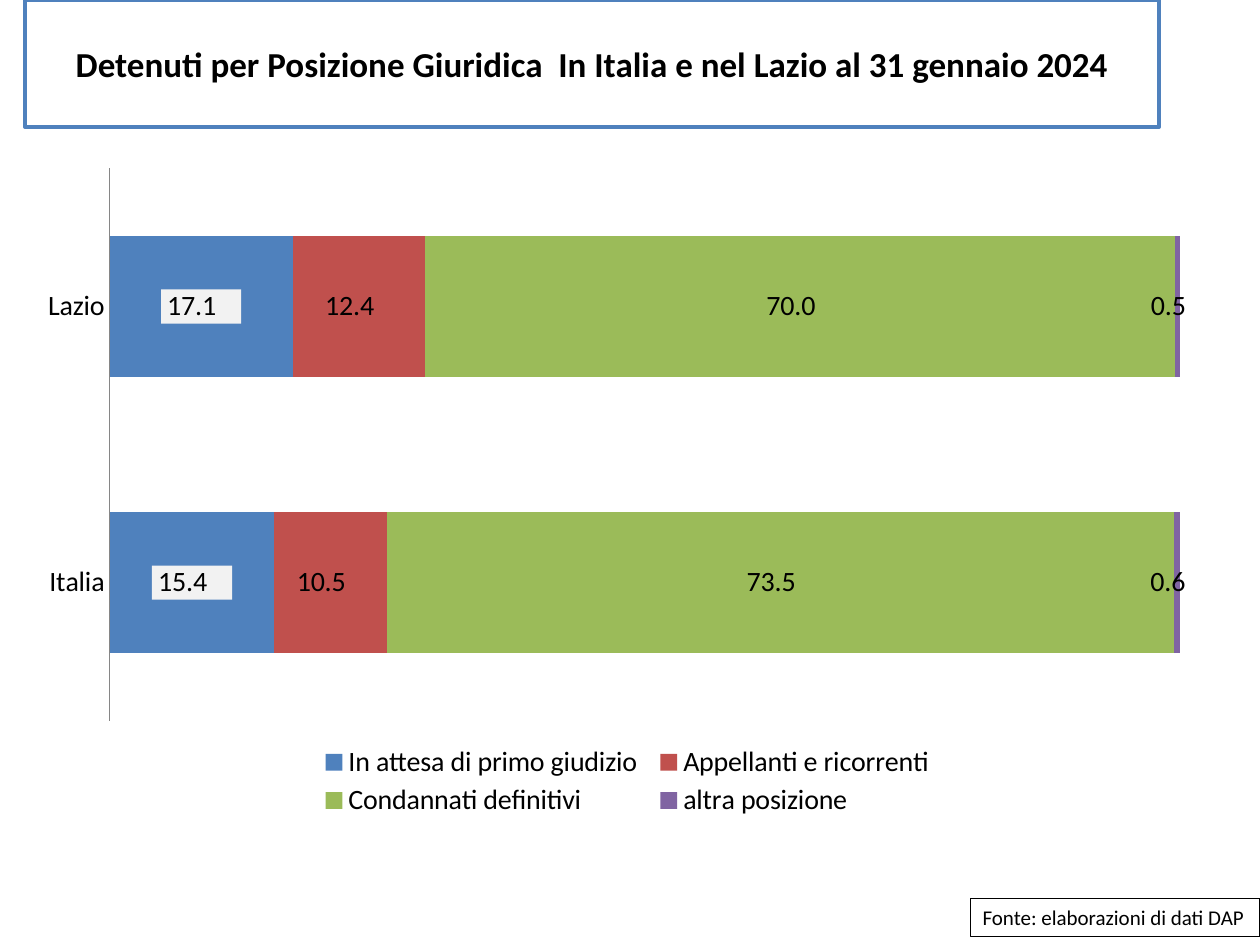
from dataclasses import dataclass

import pptx
import pptx.chart.data
import pptx.dml.color
import pptx.enum.chart
import pptx.enum.text
import pptx.oxml
import pptx.oxml.ns
import pptx.util
from lxml import etree

Pt = pptx.util.Pt
FONT = "Calibri"
NUMBER_FORMAT = r"_-* #,##0.0\ _€_-;\-* #,##0.0\ _€_-;_-* "
NS = pptx.oxml.ns.nsdecls("c", "a")


@dataclass
class Position:
    name: str
    values: tuple[float, float]
    color: str
    label_fill: str | None = None


POSITIONS = [
    Position("In attesa di primo giudizio", (17.1, 15.4), "4F81BD", "F2F2F2"),
    Position("Appellanti e ricorrenti", (12.4, 10.5), "C0504D"),
    Position("Condannati definitivi", (70, 73.5), "9BBB59"),
    Position("altra posizione", (0.5, 0.6), "8064A2"),
]


def rgb(color: str) -> pptx.dml.color.RGBColor:
    return pptx.dml.color.RGBColor.from_string(color)


def format_font(font, size: float, bold: bool = False) -> None:
    font.name = FONT
    font.size = Pt(size)
    font.bold = bold
    font.color.rgb = rgb("000000")


def write(sp, text: str, *, size: float, bold: bool = False, align=None,
          anchor=pptx.enum.text.MSO_ANCHOR.TOP, wrap: bool = True) -> None:
    tf = sp.text_frame
    tf.word_wrap = wrap
    tf.vertical_anchor = anchor
    p = tf.paragraphs[0]
    p.alignment = align
    r = p.add_run()
    r.text = text
    format_font(r.font, size, bold)


def frame(sp, line: str, width: float) -> None:
    sp.fill.solid()
    sp.fill.fore_color.rgb = rgb("FFFFFF")
    sp.line.color.rgb = rgb(line)
    sp.line.width = Pt(width)


def manual_layout(x: float, y: float, w: float, h: float, inner: bool = False):
    target = '<c:layoutTarget val="inner"/>' if inner else ""
    return pptx.oxml.parse_xml(
        f'<c:layout {NS}><c:manualLayout>{target}'
        '<c:xMode val="edge"/><c:yMode val="edge"/>'
        f'<c:x val="{x}"/><c:y val="{y}"/><c:w val="{w}"/><c:h val="{h}"/>'
        '</c:manualLayout></c:layout>')


def format_series(series, position: Position) -> None:
    series.format.fill.solid()
    series.format.fill.fore_color.rgb = rgb(position.color)
    labels = series.data_labels
    labels.show_value = True
    labels.number_format = NUMBER_FORMAT
    labels.number_format_is_linked = False
    format_font(labels.font, 16)
    if position.label_fill:
        fill = pptx.oxml.parse_xml(
            f'<c:spPr {NS}><a:solidFill><a:srgbClr val="{position.label_fill}"/>'
            '</a:solidFill></c:spPr>')
        labels._element.find(pptx.oxml.ns.qn("c:numFmt")).addnext(fill)


def add_positions_chart(s) -> None:
    data = pptx.chart.data.CategoryChartData(number_format=NUMBER_FORMAT)
    data.categories = ["Lazio", "Italia"]
    for position in POSITIONS:
        data.add_series(position.name, position.values)
    chart = s.shapes.add_chart(
        pptx.enum.chart.XL_CHART_TYPE.BAR_STACKED_100,
        Pt(15), Pt(88.5), Pt(680), Pt(385), data).chart
    format_font(chart.font, 16)
    chart.has_title = False

    plot = chart.plots[0]
    plot.gap_width = 95
    plot.overlap = 100
    plot.vary_by_categories = False
    for series, position in zip(plot.series, POSITIONS):
        format_series(series, position)

    axis = chart.category_axis
    axis.reverse_order = True
    axis.major_tick_mark = pptx.enum.chart.XL_TICK_MARK.NONE
    axis.format.line.color.rgb = rgb("868686")
    axis.format.line.width = Pt(0.75)
    chart.value_axis.visible = False
    chart.value_axis.has_major_gridlines = False

    chart.has_legend = True
    legend = chart.legend
    legend.position = pptx.enum.chart.XL_LEGEND_POSITION.BOTTOM
    legend.include_in_layout = False
    format_font(legend.font, 16)

    qn = pptx.oxml.ns.qn
    for old in legend._element.findall(qn("c:layout")):
        legend._element.remove(old)
    legend._element.find(qn("c:legendPos")).addnext(
        manual_layout(0.24, 0.87, 0.53, 0.12))
    area = chart._chartSpace.chart.plotArea
    for old in area.findall(qn("c:layout")):
        area.remove(old)
    area.insert(0, manual_layout(0.07, 0.02, 0.9, 0.82, inner=True))


def main() -> None:
    prs = pptx.Presentation()
    prs.slide_width, prs.slide_height = Pt(720), Pt(540)
    s = prs.slides.add_slide(prs.slide_layouts[5])

    title = s.shapes.title
    title.left, title.top, title.width, title.height = Pt(14.4), Pt(0), Pt(648), Pt(72.7)
    frame(title, "4F81BD", 2)
    write(title, "Detenuti per Posizione Giuridica  In Italia e nel Lazio al 31 gennaio 2024",
          size=20, bold=True, align=pptx.enum.text.PP_ALIGN.CENTER,
          anchor=pptx.enum.text.MSO_ANCHOR.MIDDLE)

    source = s.shapes.add_textbox(Pt(554.4), Pt(513.4), Pt(165.6), Pt(21.6))
    frame(source, "000000", 0.75)
    write(source, "Fonte: elaborazioni di dati DAP", size=12, wrap=False)
    source.text_frame.auto_size = pptx.enum.text.MSO_AUTO_SIZE.SHAPE_TO_FIT_TEXT

    add_positions_chart(s)
    prs.save("out.pptx")


if __name__ == "__main__":
    main()
